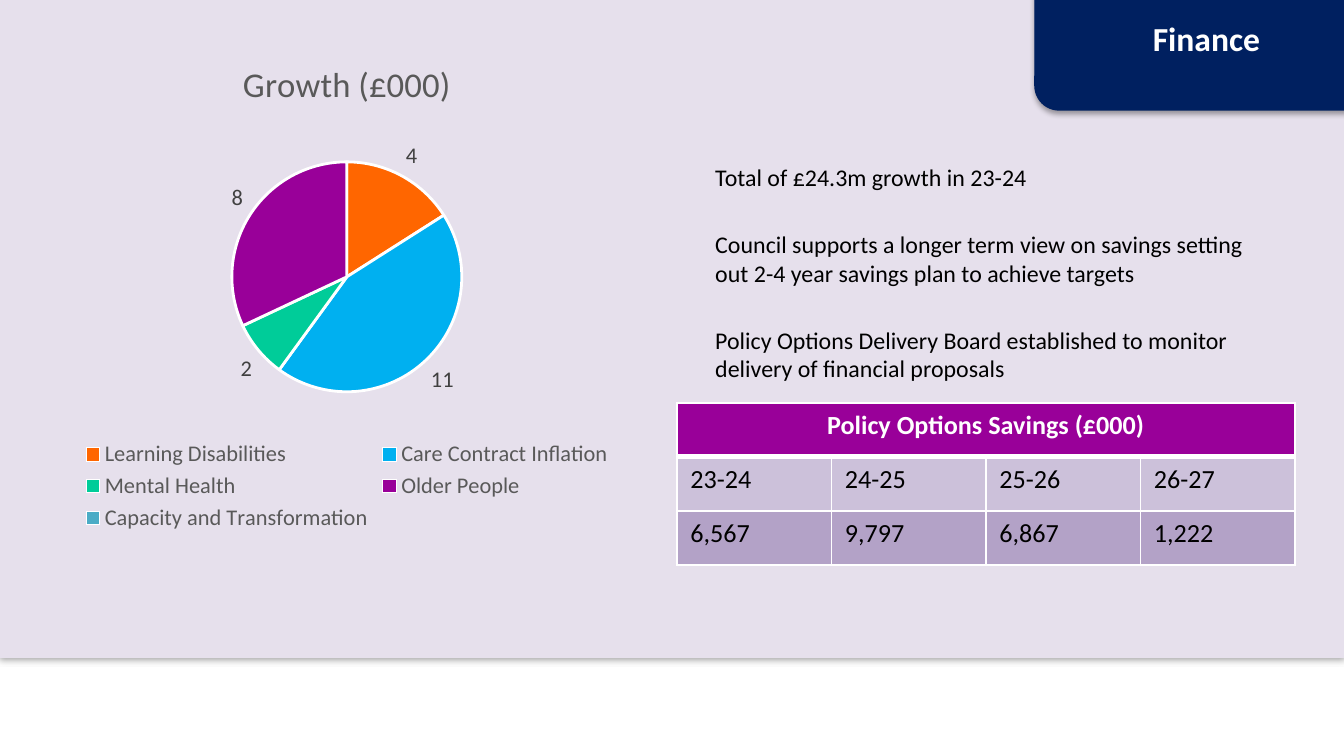
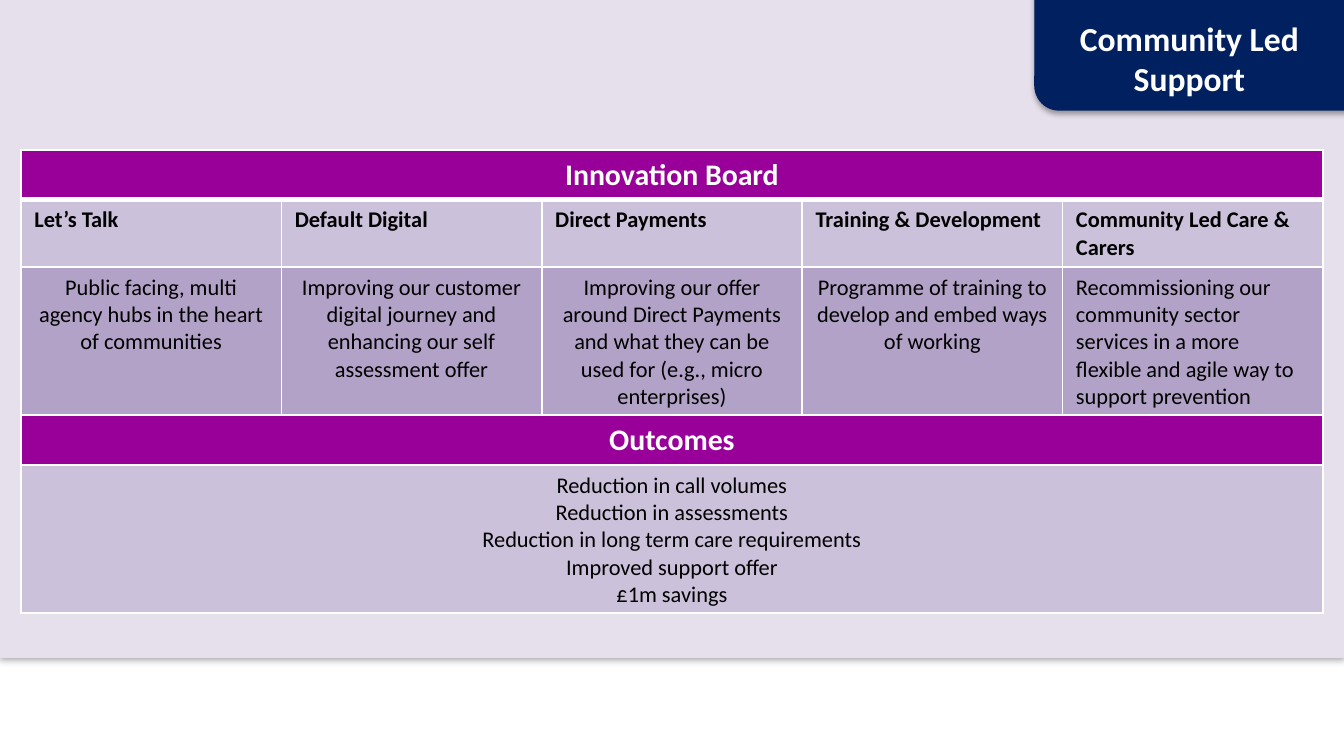
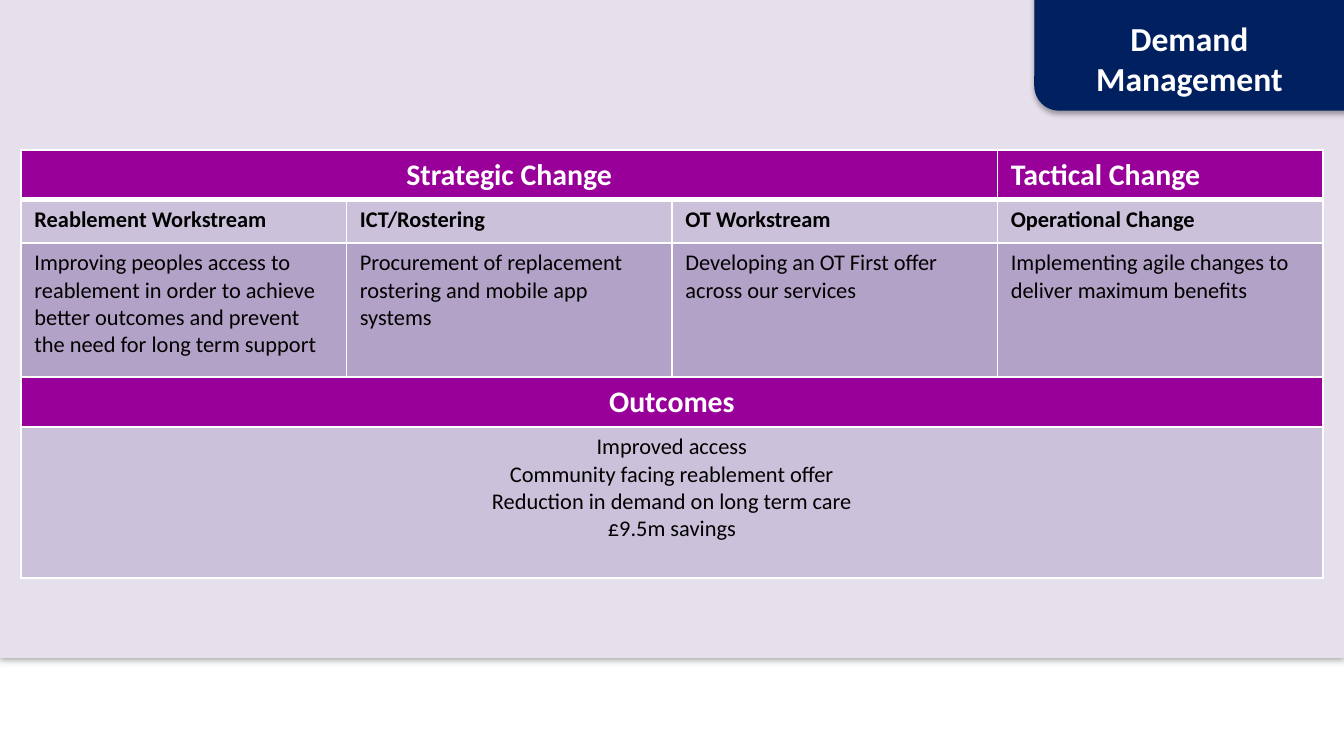
"""Build three slides on finance, community led support and demand management."""
from pptx import Presentation
from pptx.chart.data import CategoryChartData
from pptx.dml.color import RGBColor
from pptx.enum.chart import XL_CHART_TYPE as ChartType
from pptx.enum.chart import XL_LABEL_POSITION as LabelPosition
from pptx.enum.chart import XL_LEGEND_POSITION as LegendPosition
from pptx.enum.shapes import MSO_SHAPE as Shape
from pptx.enum.text import MSO_ANCHOR as Anchor
from pptx.enum.text import MSO_AUTO_SIZE as AutoSize
from pptx.enum.text import PP_ALIGN as Align
from pptx.oxml import parse_xml
from pptx.oxml.ns import nsdecls, qn
from pptx.util import Emu, Pt

WHITE = RGBColor(0xFF, 0xFF, 0xFF)
BLACK = RGBColor(0x00, 0x00, 0x00)
NAVY = RGBColor(0x00, 0x20, 0x60)
PURPLE = RGBColor(0x99, 0x00, 0x99)
PALE_LILAC = RGBColor(0xE6, 0xE0, 0xEC)
LILAC = RGBColor(0xCC, 0xC1, 0xDA)
MAUVE = RGBColor(0xB3, 0xA2, 0xC7)
ORANGE = RGBColor(0xFF, 0x66, 0x00)
SKY = RGBColor(0x00, 0xB0, 0xF0)
GREEN = RGBColor(0x00, 0xCC, 0x99)
TEAL = RGBColor(0x4B, 0xAC, 0xC6)
GREY = RGBColor(0x59, 0x59, 0x59)
DARK_GREY = RGBColor(0x40, 0x40, 0x40)

TITLE_FONT = {"size": Pt(18), "bold": True}
ADVICE_FONT = {"size": Pt(12.8), "bold": False}
SAVINGS_HEAD = {"size": Pt(14), "bold": True}
SAVINGS_CELL = {"size": Pt(14), "bold": False}
BAND = {"size": Pt(16), "bold": True}
STREAM = {"size": Pt(12), "bold": True}
DETAIL = {"size": Pt(12), "bold": False}
CHART_TITLE = {"size": Pt(18.6), "bold": False}

SHADOW = (
    f'<a:outerShdw {nsdecls("a")} blurRad="40000" dist="23000" dir="5400000" rotWithShape="0">'
    '<a:srgbClr val="000000"><a:alpha val="35000"/></a:srgbClr></a:outerShdw>'
)

BACKDROP = [
    (Shape.RECTANGLE, (0, 0, 1344, 657), PALE_LILAC),
    (Shape.ROUNDED_RECTANGLE, (1035, -35, 466, 145), NAVY),
]

SLIDES = [
    {
        "title": "Finance",
        "title_box": (986, 11, 441, 54),
        "table_box": (677, 403, 618),
        "rows": [
            (54, PURPLE, WHITE, SAVINGS_HEAD, 4, ["Policy Options Savings (£000)", None, None, None]),
            (54, LILAC, BLACK, SAVINGS_CELL, 0, ["23-24", "24-25", "25-26", "26-27"]),
            (54, MAUVE, BLACK, SAVINGS_CELL, 0, ["6,567", "9,797", "6,867", "1,222"]),
        ],
    },
    {
        "title": "Community Led\nSupport",
        "title_box": (969, 11, 441, 95),
        "table_box": (21, 150, 1302),
        "rows": [
            (50, PURPLE, WHITE, BAND, 5, ["Innovation Board", None, None, None, None]),
            (66, LILAC, BLACK, STREAM, 0, [
                "Let’s Talk",
                "Default Digital",
                "Direct Payments",
                "Training & Development",
                "Community Led Care & Carers",
            ]),
            (148, MAUVE, BLACK, DETAIL, 4, [
                "Public facing, multi agency hubs in the heart of communities",
                "Improving our customer digital journey and enhancing our self assessment offer",
                "Improving our offer around Direct Payments and what they can be used for "
                "(e.g., micro enterprises)",
                "Programme of training to develop and embed ways of working",
                "Recommissioning our community sector services in a more flexible and agile way "
                "to support prevention",
            ]),
            (50, PURPLE, WHITE, BAND, 5, ["Outcomes", None, None, None, None]),
            (148, LILAC, BLACK, DETAIL, 5, [
                "Reduction in call volumes\nReduction in assessments\n"
                "Reduction in long term care requirements\nImproved support offer\n£1m savings",
                None, None, None, None,
            ]),
        ],
    },
    {
        "title": "Demand\nManagement",
        "title_box": (969, 11, 441, 95),
        "table_box": (21, 150, 1302),
        "rows": [
            (50, PURPLE, WHITE, BAND, 3, ["Strategic Change", None, None, "Tactical Change"]),
            (43, LILAC, BLACK, STREAM, 0, [
                "Reablement Workstream", "ICT/Rostering", "OT Workstream", "Operational Change",
            ]),
            (134, MAUVE, BLACK, DETAIL, 0, [
                "Improving peoples access to reablement in order to achieve better outcomes "
                "and prevent the need for long term support",
                "Procurement of replacement rostering and mobile app systems",
                "Developing an OT First offer across our services",
                "Implementing agile changes to deliver maximum benefits",
            ]),
            (50, PURPLE, WHITE, BAND, 4, ["Outcomes", None, None, None]),
            (151, LILAC, BLACK, DETAIL, 4, [
                "Improved access\nCommunity facing reablement offer\n"
                "Reduction in demand on long term care\n£9.5m savings",
                None, None, None,
            ]),
        ],
    },
]

GROWTH = [
    ("Learning Disabilities", 4, ORANGE),
    ("Care Contract Inflation", 11, SKY),
    ("Mental Health", 2, GREEN),
    ("Older People", 8, PURPLE),
    ("Capacity and Transformation", 0, TEAL),
]

ADVICE = [
    "Total of £24.3m growth in 23-24",
    "Council supports a longer term view on savings setting out 2-4 year savings plan "
    "to achieve targets",
    "Policy Options Delivery Board established to monitor delivery of financial proposals",
]


def px(*lengths):
    return [Emu(round(length * 914400 / 134.4)) for length in lengths]


def format_text(frame, values, color, align):
    for paragraph in frame.paragraphs:
        paragraph.alignment = align
        for run in paragraph.runs:
            run.font.name = "Calibri"
            run.font.color.rgb = color
            for name, value in values.items():
                setattr(run.font, name, value)


deck = Presentation()
deck.slide_width, deck.slide_height = px(1344, 756)
title_only = deck.slide_layouts[5]

for content in SLIDES:
    slide = deck.slides.add_slide(title_only)
    for preset, box, color in BACKDROP:
        panel = slide.shapes.add_shape(preset, *px(*box))
        panel.fill.solid()
        panel.fill.fore_color.rgb = color
        panel.line.color.rgb = color
        panel.line.width = Pt(0.75)
        panel.shadow.inherit = False
        panel.element.spPr.find(qn("a:effectLst")).append(parse_xml(SHADOW))

    title = slide.shapes.title
    slide.shapes.element.append(title.element)
    title.left, title.top, title.width, title.height = px(*content["title_box"])
    title.text_frame.text = content["title"]
    title.text_frame.word_wrap = True
    title.text_frame.auto_size = AutoSize.SHAPE_TO_FIT_TEXT
    title.text_frame.vertical_anchor = Anchor.TOP
    format_text(title.text_frame, TITLE_FONT, WHITE, Align.CENTER)

    rows = content["rows"]
    column_count = len(rows[0][-1])
    height = sum(row[0] for row in rows)
    table = slide.shapes.add_table(
        len(rows), column_count, *px(*content["table_box"], height)
    ).table
    table.horz_banding = False
    for r, (row_height, fill, color, font, centred, texts) in enumerate(rows):
        table.rows[r].height = px(row_height)[0]
        for c, text in enumerate(texts):
            cell = table.cell(r, c)
            properties = cell._tc.get_or_add_tcPr()
            for side in "LRTB":
                heavy = (r, side) in ((0, "B"), (1, "T"))
                properties.append(parse_xml(
                    f'<a:ln{side} {nsdecls("a")} w="{Pt(3 if heavy else 1)}">'
                    f'<a:solidFill><a:srgbClr val="{WHITE}"/></a:solidFill></a:ln{side}>'
                ))
            cell.fill.solid()
            cell.fill.fore_color.rgb = fill
            if text is None:
                continue
            cell.text = text
            format_text(cell.text_frame, font, color, Align.CENTER if c < centred else Align.LEFT)
            last = c
            while last + 1 < column_count and texts[last + 1] is None:
                last += 1
            if last > c:
                cell.merge(table.cell(r, last))

finance = deck.slides[0]
advice = finance.shapes.add_textbox(*px(702, 156, 568, 208)).text_frame
advice.word_wrap = True
advice.text = "\n".join(ADVICE)
format_text(advice, ADVICE_FONT, BLACK, Align.LEFT)
for paragraph in advice.paragraphs[1:]:
    paragraph.space_before = Pt(20.5)

growth_data = CategoryChartData(number_format="0")
growth_data.categories = [name for name, _, _ in GROWTH]
growth_data.add_series("Growth (£000)", [value for _, value, _ in GROWTH])
growth = finance.shapes.add_chart(ChartType.PIE, *px(15, 36, 664, 501), growth_data).chart
growth.has_title = True
growth.chart_title.text_frame.text = "Growth (£000)"
format_text(growth.chart_title.text_frame, CHART_TITLE, GREY, Align.CENTER)
growth.chart_title.include_in_layout = False
growth.has_legend = True
growth.legend.position = LegendPosition.BOTTOM
growth.legend.include_in_layout = False

pie = growth.plots[0]
pie.vary_by_categories = True
pie.has_data_labels = True
labels = pie.data_labels
labels.show_value = True
labels.position = LabelPosition.OUTSIDE_END
labels.number_format = "0"
labels.number_format_is_linked = False
for font, size, color in [
    (growth.font, 10, BLACK),
    (growth.legend.font, 12, GREY),
    (labels.font, 12, DARK_GREY),
]:
    font.name = "Calibri"
    font.size = Pt(size)
    font.color.rgb = color
for index, (_, _, color) in enumerate(GROWTH):
    slice_format = pie.series[0].points[index].format
    slice_format.fill.solid()
    slice_format.fill.fore_color.rgb = color
    slice_format.line.color.rgb = WHITE
    slice_format.line.width = Pt(1.5)

deck.save("out.pptx")
